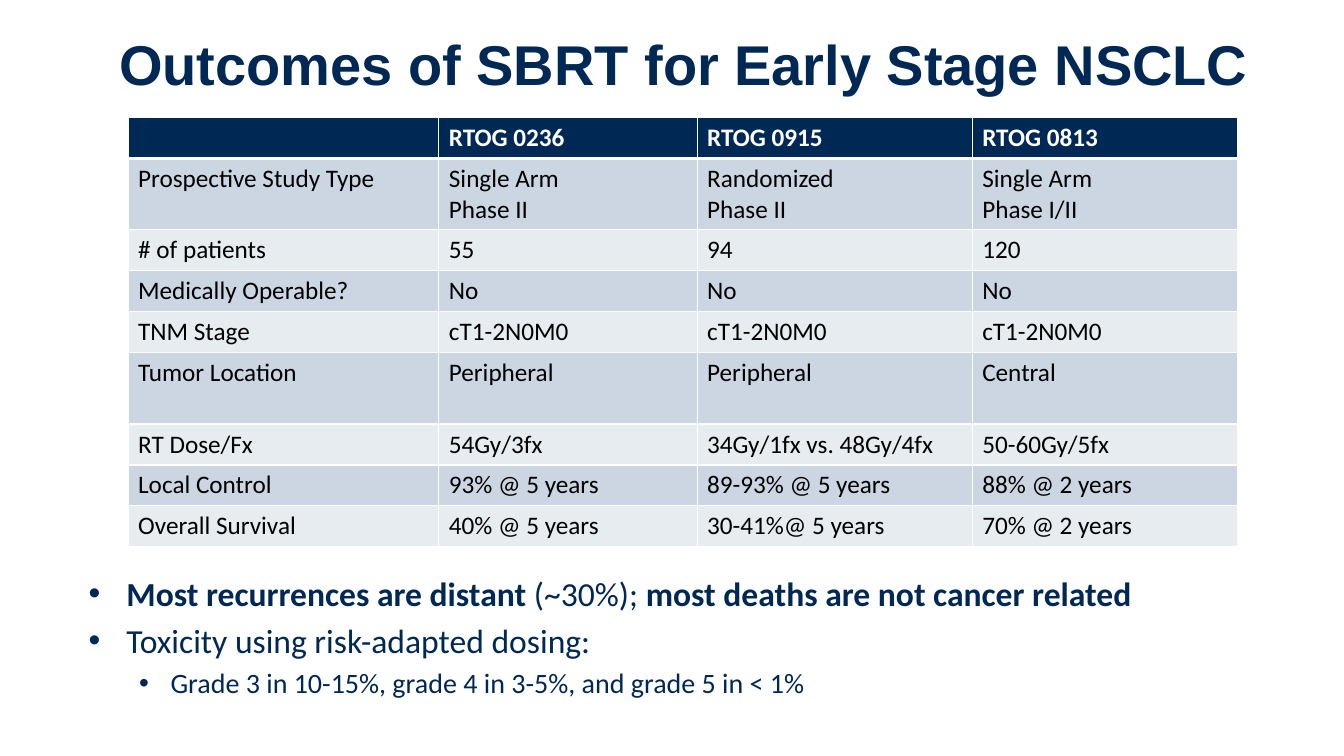
from lxml.etree import SubElement
from pptx import Presentation
from pptx.dml.color import RGBColor
from pptx.enum.text import MSO_ANCHOR, PP_ALIGN
from pptx.oxml.ns import qn
from pptx.util import Pt

PX = 9525
NAVY = RGBColor(0x00, 0x28, 0x55)
WHITE = RGBColor(0xFF, 0xFF, 0xFF)
BLACK = RGBColor(0x00, 0x00, 0x00)
BAND_DARK = RGBColor(0xCC, 0xD6, 0xE2)
BAND_LIGHT = RGBColor(0xE7, 0xEC, 0xF1)

TITLE = "Outcomes of SBRT for Early Stage NSCLC"
COLUMN_WIDTHS = [296, 246, 262, 253]
LINE_HEIGHT, ROW_HEIGHT, TALL_ROW_HEIGHT = 29, 39, 68
TALL_ROWS = {"Prospective Study Type", "Tumor Location"}
TRIALS = [
    ["", "RTOG 0236", "RTOG 0915", "RTOG 0813"],
    ["Prospective Study Type", "Single Arm\nPhase II", "Randomized\nPhase II", "Single Arm\nPhase I/II"],
    ["# of patients", "55", "94", "120"],
    ["Medically Operable?", "No", "No", "No"],
    ["TNM Stage", "cT1-2N0M0", "cT1-2N0M0", "cT1-2N0M0"],
    ["Tumor Location", "Peripheral", "Peripheral", "Central"],
    ["RT Dose/Fx", "54Gy/3fx", "34Gy/1fx vs. 48Gy/4fx", "50-60Gy/5fx"],
    ["Local Control", "93% @ 5 years", "89-93% @ 5 years", "88% @ 2 years"],
    ["Overall Survival", "40% @ 5 years", "30-41%@ 5 years", "70% @ 2 years"],
]
FINDINGS = [
    (0, [("Most recurrences are distant ", True), ("(~30%); ", False),
         ("most deaths are not cancer related", True)]),
    (0, [("Toxicity using risk-adapted dosing:", False)]),
    (1, [("Grade 3 in 10-15%, grade 4 in 3-5%, and grade 5 in < 1%", False)]),
]
LEVELS = [{"size": 24, "margin": 36, "hanging": 36}, {"size": 20, "margin": 78, "hanging": 30}]


def set_font(font, color, **values):
    """Apply a colour and font attributes."""
    font.color.rgb = color
    for name, value in values.items():
        setattr(font, name, value)


def add_text_frame(page, box):
    """Add a wrapping text box and return its frame."""
    frame = page.shapes.add_textbox(*(length * PX for length in box)).text_frame
    frame.word_wrap = True
    return frame


def add_title(page, box):
    """Place the centred headline."""
    frame = add_text_frame(page, box)
    frame.vertical_anchor = MSO_ANCHOR.MIDDLE
    para = frame.paragraphs[0]
    para.alignment = PP_ALIGN.CENTER
    span = para.add_run()
    span.text = TITLE
    set_font(span.font, NAVY, name="Arial", size=Pt(40), bold=True)


def add_borders(cell, bottom_width):
    """Draw white rules on all four sides of a cell."""
    properties = cell._tc.get_or_add_tcPr()
    for side, width in {"L": 1, "R": 1, "T": 1, "B": bottom_width}.items():
        line = SubElement(properties, qn(f"a:ln{side}"), w=str(Pt(width)))
        fill = SubElement(line, qn("a:solidFill"))
        SubElement(fill, qn("a:srgbClr"), val=str(WHITE))


def add_trial_table(page, left, top):
    """Place the trial comparison with a header and banded rows."""
    heights = [TALL_ROW_HEIGHT if row[0] in TALL_ROWS else ROW_HEIGHT for row in TRIALS]
    size = (sum(COLUMN_WIDTHS), sum(heights))
    table = page.shapes.add_table(len(TRIALS), len(COLUMN_WIDTHS),
                                  *(length * PX for length in (left, top, *size))).table
    for column, width in zip(table.columns, COLUMN_WIDTHS):
        column.width = width * PX
    for index, (row, height, texts) in enumerate(zip(table.rows, heights, TRIALS)):
        row.height = height * PX
        header = index == 0
        band = NAVY if header else BAND_DARK if index % 2 else BAND_LIGHT
        for cell, text in zip(row.cells, texts):
            add_borders(cell, 3 if header else 1)
            cell.fill.solid()
            cell.fill.fore_color.rgb = band
            cell.text = text
            for para in cell.text_frame.paragraphs:
                set_font(para.font, WHITE if header else BLACK,
                         name="Calibri", size=Pt(18), bold=header)


def add_bullet(para, margin, hanging):
    """Give a paragraph a navy bullet and a hanging indent."""
    properties = para._p.get_or_add_pPr()
    properties.set("marL", str(margin * PX))
    properties.set("indent", str(-hanging * PX))
    color = SubElement(properties, qn("a:buClr"))
    SubElement(color, qn("a:srgbClr"), val=str(NAVY))
    SubElement(properties, qn("a:buFont"), typeface="Arial")
    SubElement(properties, qn("a:buChar"), char="•")


def add_findings(page, box):
    """Place the bulleted findings."""
    frame = add_text_frame(page, box)
    for index, (level, spans) in enumerate(FINDINGS):
        style = LEVELS[level]
        para = frame.add_paragraph() if index else frame.paragraphs[0]
        para.level = level
        add_bullet(para, style["margin"], style["hanging"])
        if index:
            para.space_before = Pt(style["size"] * 0.2)
        for text, bold in spans:
            span = para.add_run()
            span.text = text
            set_font(span.font, NAVY, name="Calibri", size=Pt(style["size"]), bold=bold)


def main():
    """Build and save the deck."""
    deck = Presentation()
    deck.slide_width, deck.slide_height = 1280 * PX, 720 * PX
    page = deck.slides.add_slide(deck.slide_layouts[6])
    add_title(page, (75, 0, 1152, 120))
    add_findings(page, (75, 541, 1173, 143))
    add_trial_table(page, 122, 112)
    deck.save("out.pptx")


if __name__ == "__main__":
    main()
